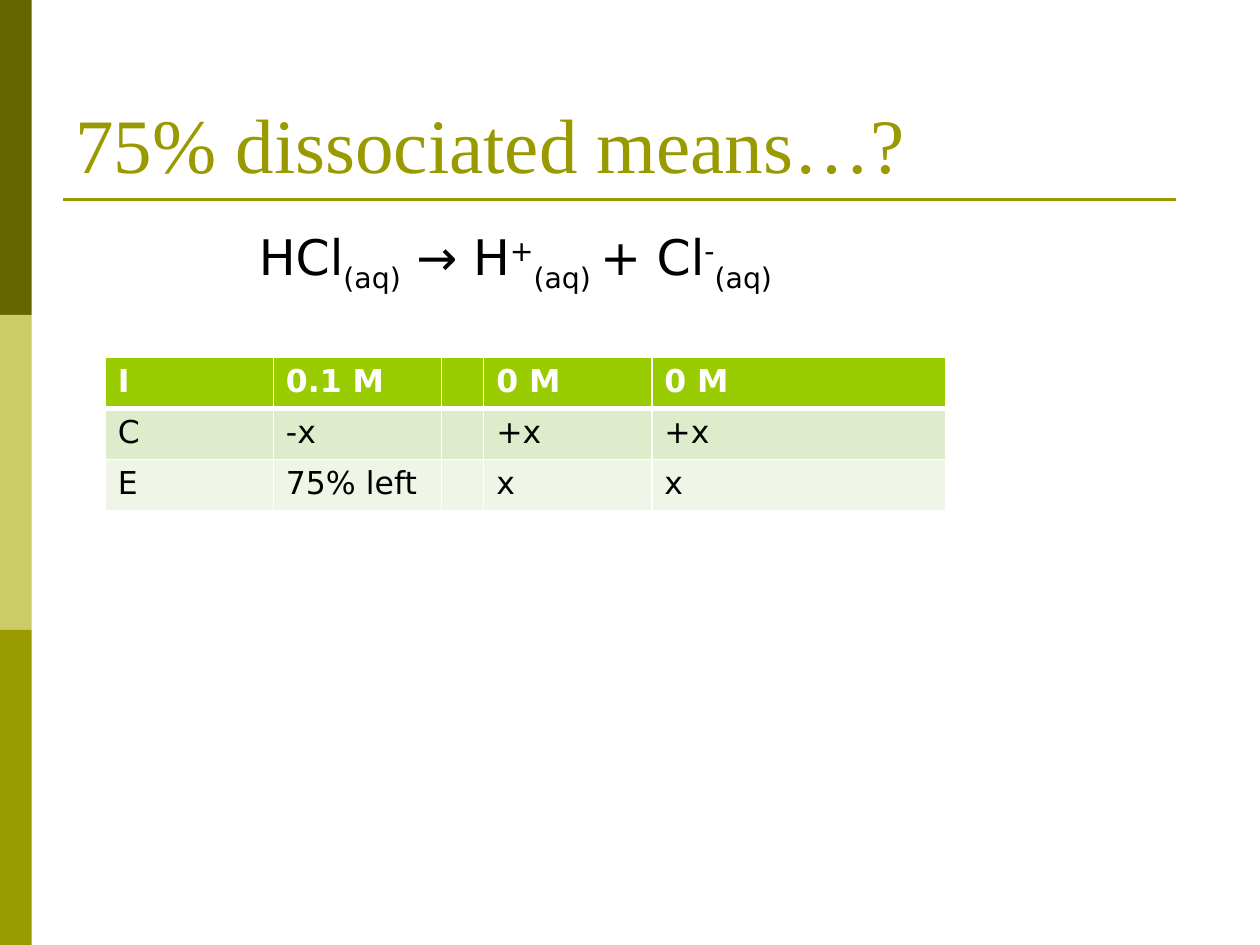
from lxml.etree import SubElement
from pptx import Presentation
from pptx.dml.color import RGBColor
from pptx.enum.shapes import MSO_CONNECTOR, MSO_SHAPE
from pptx.enum.text import MSO_ANCHOR
from pptx.oxml.ns import qn
from pptx.util import Cm, Pt

DARK_OLIVE = RGBColor(0x66, 0x66, 0x00)
PALE_OLIVE = RGBColor(0xCC, 0xCC, 0x66)
OLIVE = RGBColor(0x99, 0x99, 0x00)
GREEN = RGBColor(0x99, 0xCC, 0x00)
BAND_DARK = RGBColor(0xDE, 0xEC, 0xCC)
BAND_LIGHT = RGBColor(0xEF, 0xF6, 0xE7)
WHITE = RGBColor(0xFF, 0xFF, 0xFF)
BLACK = RGBColor(0x00, 0x00, 0x00)

SUBSCRIPT, NORMAL, SUPERSCRIPT = -25000, 0, 30000


class SlideBuilder:
    title_font = "Times New Roman"
    body_font = "DejaVu Sans"

    def __init__(self, page):
        self.page = page

    def bar(self, left, top, width, height, color):
        shape = self.page.shapes.add_shape(
            MSO_SHAPE.RECTANGLE, Cm(left), Cm(top), Cm(width), Cm(height))
        shape.shadow.inherit = False
        shape.fill.solid()
        shape.fill.fore_color.rgb = color
        shape.line.fill.background()

    def rule(self, left, right, y, color):
        line = self.page.shapes.add_connector(
            MSO_CONNECTOR.STRAIGHT, Cm(left), Cm(y), Cm(right), Cm(y))
        line.line.color.rgb = color
        line.line.width = Pt(1.5)
        SubElement(line._element.spPr, qn("a:effectLst"))

    def span(self, para, text, font, size, color, bold=False, baseline=NORMAL):
        span = para.add_run()
        span.text = text
        span.font.name = font
        span.font.size = Pt(size)
        span.font.color.rgb = color
        span.font.bold = bold
        if baseline:
            span.font._element.set("baseline", str(baseline))

    def text(self, left, top, width, height, spans, font, size, color,
             anchor=MSO_ANCHOR.TOP, indent=0, space_before=0):
        box = self.page.shapes.add_textbox(
            Cm(left), Cm(top), Cm(width), Cm(height))
        frame = box.text_frame
        frame.word_wrap = True
        frame.vertical_anchor = anchor
        para = frame.paragraphs[0]
        para.space_before = Pt(space_before)
        para._p.get_or_add_pPr().set("marL", str(Cm(indent)))
        for text, baseline in spans:
            self.span(para, text, font, size, color, baseline=baseline)

    def border(self, cell, side, width):
        line = SubElement(cell._tc.get_or_add_tcPr(), qn(f"a:ln{side}"),
                          w=str(Pt(width)))
        fill = SubElement(line, qn("a:solidFill"))
        SubElement(fill, qn("a:srgbClr"), val=str(WHITE))

    def table(self, left, top, widths, row_height, rows, fills):
        table = self.page.shapes.add_table(
            len(rows), len(widths), Cm(left), Cm(top),
            Cm(sum(widths)), Cm(row_height * len(rows))).table
        for column, width in zip(table.columns, widths):
            column.width = Cm(width)
        for r, (values, fill) in enumerate(zip(rows, fills)):
            table.rows[r].height = Cm(row_height)
            header = r == 0
            for c, value in enumerate(values):
                cell = table.cell(r, c)
                # A thick border separates the header from the rows below
                widths_by_side = {"L": 1, "R": 1, "T": 3 if r == 1 else 1,
                                  "B": 3 if header else 1}
                for side, width in widths_by_side.items():
                    self.border(cell, side, width)
                cell.fill.solid()
                cell.fill.fore_color.rgb = fill
                if value:
                    self.span(cell.text_frame.paragraphs[0], value,
                              self.body_font, 18,
                              WHITE if header else BLACK, bold=header)


def main():
    deck = Presentation()
    deck.slide_width, deck.slide_height = Cm(25.4), Cm(19.05)
    builder = SlideBuilder(deck.slides.add_slide(deck.slide_layouts[6]))

    # Side bars and title rule
    bar_height = 19.05 / 3
    for i, color in enumerate((DARK_OLIVE, PALE_OLIVE, OLIVE)):
        builder.bar(0, i * bar_height, 0.64, bar_height, color)
    builder.rule(1.27, 23.7, 4.02, OLIVE)

    # Title
    builder.text(1.27, 0.76, 22.86, 3.18,
                 [("75% dissociated means…?", NORMAL)],
                 builder.title_font, 44, OLIVE, anchor=MSO_ANCHOR.BOTTOM)

    # Dissociation equation
    equation = [("HCl", NORMAL), ("(aq)", SUBSCRIPT), (" → H", NORMAL),
                ("+", SUPERSCRIPT), ("(aq) ", SUBSCRIPT), ("+ Cl", NORMAL),
                ("-", SUPERSCRIPT), ("(aq)", SUBSCRIPT)]
    builder.text(1.27, 4.45, 22.86, 12.57, equation, builder.body_font, 28,
                 BLACK, indent=3.7, space_before=5.6)

    # Initial, change and equilibrium concentrations
    builder.table(2.12, 7.2, [3.39, 3.39, 0.85, 3.39, 5.93], 1.03,
                  [["I", "0.1 M", "", "0 M", "0 M"],
                   ["C", "-x", "", "+x", "+x"],
                   ["E", "75% left", "", "x", "x"]],
                  [GREEN, BAND_DARK, BAND_LIGHT])

    deck.save("out.pptx")


if __name__ == "__main__":
    main()
